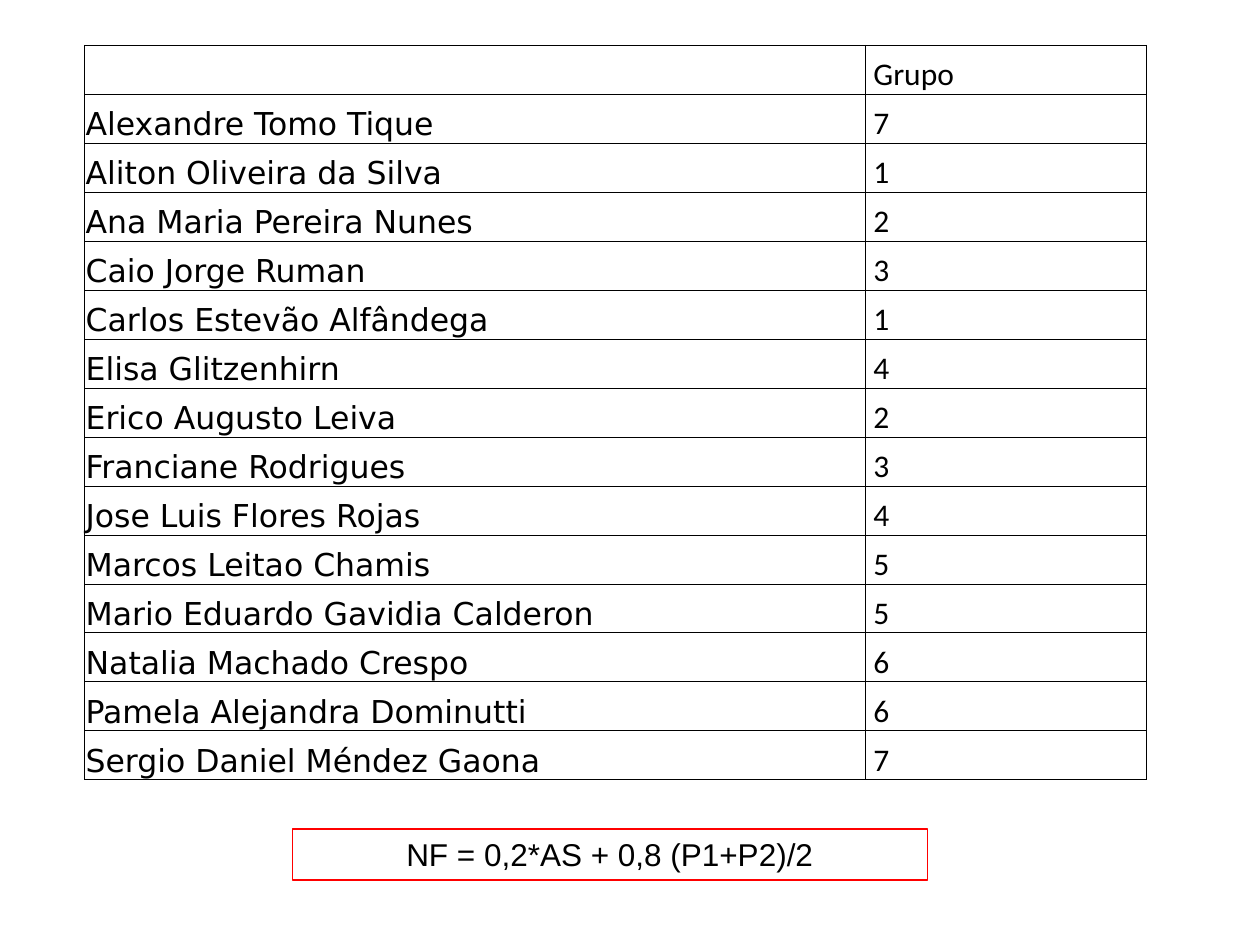
from lxml.etree import SubElement
from pptx import Presentation
from pptx.dml.color import RGBColor
from pptx.enum.shapes import MSO_SHAPE
from pptx.enum.text import MSO_ANCHOR, PP_ALIGN
from pptx.oxml import parse_xml
from pptx.oxml.ns import nsdecls, qn
from pptx.util import Inches, Pt

BLACK = RGBColor(0x00, 0x00, 0x00)
WHITE = RGBColor(0xFF, 0xFF, 0xFF)
RED = RGBColor(0xFF, 0x00, 0x00)

WIDTH, HEIGHT = Inches(10), Inches(7.5)

STUDENTS = [
    ("Alexandre Tomo Tique", 7),
    ("Aliton Oliveira da Silva", 1),
    ("Ana Maria Pereira Nunes", 2),
    ("Caio Jorge Ruman", 3),
    ("Carlos Estevão Alfândega", 1),
    ("Elisa Glitzenhirn", 4),
    ("Erico Augusto Leiva", 2),
    ("Franciane Rodrigues", 3),
    ("Jose Luis Flores Rojas", 4),
    ("Marcos Leitao Chamis", 5),
    ("Mario Eduardo Gavidia Calderon", 5),
    ("Natalia Machado Crespo", 6),
    ("Pamela Alejandra Dominutti", 6),
    ("Sergio Daniel Méndez Gaona", 7),
]
COLUMN_FONTS = ("DejaVu Sans", "Calibri")
NAME_SHARE = 0.735

CELL_FORMAT = {
    "margin_left": Inches(0.01),
    "margin_right": Inches(0.01),
    "margin_top": Inches(0.01),
    "margin_bottom": 0,
    "vertical_anchor": MSO_ANCHOR.BOTTOM,
}


def apply_format(target, values):
    for name, value in values.items():
        setattr(target, name, value)


def write_text(para, text, font_name):
    span = para.add_run()
    span.text = text
    apply_format(span.font, {"name": font_name, "size": Pt(18)})
    span.font.color.rgb = BLACK


def add_borders(cell):
    """Rule all four sides; the lines must precede the fill."""
    properties = cell._tc.get_or_add_tcPr()
    for position, side in enumerate(("lnL", "lnR", "lnT", "lnB")):
        line = parse_xml(f'<a:{side} {nsdecls("a")} w="{Pt(0.5)}"/>')
        fill = SubElement(line, qn("a:solidFill"))
        SubElement(fill, qn("a:srgbClr"), val=str(BLACK))
        properties.insert(position, line)


def add_group_table(page, box):
    left, top, width, height = box
    # The group column starts with a no-break space
    rows = [("", " Grupo")] + [(name, f" {group}") for name, group in STUDENTS]
    table = page.shapes.add_table(len(rows), 2, left, top, width, height).table
    apply_format(table, {"first_row": False, "horz_banding": False})
    table.columns[0].width = int(width * NAME_SHARE)
    table.columns[1].width = width - table.columns[0].width

    for row_index, texts in enumerate(rows):
        table.rows[row_index].height = height // len(rows)
        for column, (text, font_name) in enumerate(zip(texts, COLUMN_FONTS)):
            cell = table.cell(row_index, column)
            apply_format(cell, CELL_FORMAT)
            cell.fill.solid()
            cell.fill.fore_color.rgb = WHITE
            add_borders(cell)
            if text:
                write_text(cell.text_frame.paragraphs[0], text, font_name)


def add_formula(page, box):
    shape = page.shapes.add_shape(MSO_SHAPE.RECTANGLE, *box)
    shape.shadow.inherit = False
    shape.fill.background()
    shape.line.color.rgb = RED
    shape.line.width = Pt(0.75)
    apply_format(shape.text_frame, {
        "word_wrap": True, "vertical_anchor": MSO_ANCHOR.TOP,
    })
    para = shape.text_frame.paragraphs[0]
    para.alignment = PP_ALIGN.CENTER
    write_text(para, "NF = 0,2*AS + 0,8 (P1+P2)/2", "Arial")


def share_box(left, top, width, height):
    """Turn shares of the slide into lengths."""
    return (int(left * WIDTH), int(top * HEIGHT),
            int(width * WIDTH), int(height * HEIGHT))


def main():
    deck = Presentation()
    apply_format(deck, {"slide_width": WIDTH, "slide_height": HEIGHT})
    page = deck.slides.add_slide(deck.slide_layouts[6])

    # Final grade formula, then the list of students and groups
    add_formula(page, share_box(0.232, 0.8773, 0.504, 0.0539))
    add_group_table(page, share_box(0.067, 0.048, 0.843, 0.7773))

    deck.save("out.pptx")


if __name__ == "__main__":
    main()
